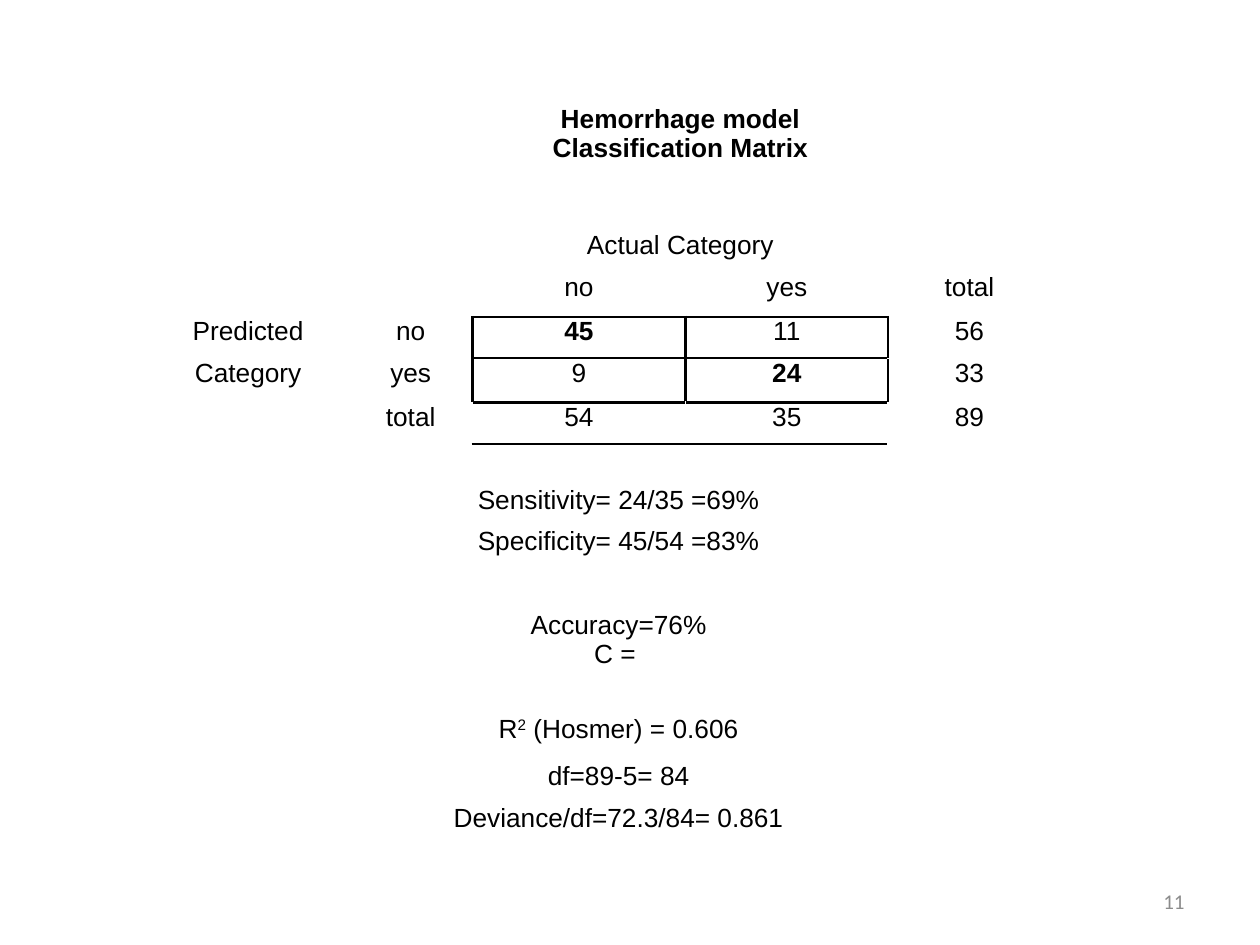
from dataclasses import dataclass

from lxml import etree
from pptx import Presentation
from pptx.dml.color import RGBColor
from pptx.enum.text import MSO_ANCHOR, PP_ALIGN
from pptx.oxml.ns import qn
from pptx.util import Pt

CENTER, RIGHT = PP_ALIGN.CENTER, PP_ALIGN.RIGHT
TOP, MIDDLE = MSO_ANCHOR.TOP, MSO_ANCHOR.MIDDLE


@dataclass(frozen=True)
class Theme:
    ink: str = "000000"
    grey: str = "8C8C8C"
    font: str = "Arial"
    foot: str = "Calibri"
    body: float = 15
    small: float = 12
    line: float = 1.5


@dataclass(frozen=True)
class Entry:
    row: int
    col: int
    text: str = ""
    span: int = 1
    bold: bool = False


THEME = Theme()
LEFT, HEAD = 84.2, 60
COLS = [115.2, 70.6, 121.7, 115.9, 92.9]
ROW = 23.8
ROWS = [ROW] * 16
ROWS[0], ROWS[3], ROWS[5], ROWS[13] = 48.2, 25.2, 25.2, 26.6

# The boxed part of the matrix
BOX_ROWS, BOX_COLS = range(4, 6), range(2, 4)
SIDES = {"lnL": (0, -1), "lnR": (0, 1), "lnT": (-1, 0), "lnB": (1, 0)}

MATRIX = [
    ["", "", "no", "yes", "total"],
    ["Predicted", "no", "45", "11", "56"],
    ["Category", "yes", "9", "24", "33"],
    ["", "total", "54", "35", "89"],
]
HITS = {(4, 2), (5, 3)}
RESULTS = [
    "Sensitivity= 24/35 =69%",
    "Specificity= 45/54 =83%",
    "",
    "Accuracy=76%\nC = ",
    "",
    "R^2^ (Hosmer) = 0.606",
    "df=89-5= 84",
    "Deviance/df=72.3/84= 0.861",
]

ENTRIES = [
    Entry(0, 0, span=2),
    Entry(0, 2, "Hemorrhage model\nClassification Matrix", 2, True),
    Entry(1, 2, span=2),
    Entry(2, 2, "Actual Category", 2),
]
ENTRIES += [
    Entry(r, c, text, bold=(r, c) in HITS)
    for r, line in enumerate(MATRIX, 3)
    for c, text in enumerate(line)
]
ENTRIES += [Entry(r, 1, text, 3) for r, text in enumerate(RESULTS, 8)]


def write(frame, text: str, *, size: float = THEME.body, font: str = THEME.font,
          color: str = THEME.ink, bold: bool = False, align=CENTER) -> None:
    """Fill a frame, one paragraph a line; text between carets is raised."""
    for i, line in enumerate(text.split("\n")):
        para = frame.add_paragraph() if i else frame.paragraphs[0]
        para.alignment = align
        for j, part in enumerate(line.split("^")):
            if not part:
                continue
            run = para.add_run()
            run.text = part
            run.font.size, run.font.name = Pt(size), font
            run.font.bold = bold
            run.font.color.rgb = RGBColor.from_string(color)
            if j % 2:
                run._r.get_or_add_rPr().set("baseline", "30000")
        # Keeps empty cells from growing to the default text size
        etree.SubElement(para._p, qn("a:endParaRPr"), sz=str(int(size * 100)))


def boxed(row: int, col: int) -> bool:
    return row in BOX_ROWS and col in BOX_COLS


def edge(cell, row: int, col: int) -> None:
    """Rule each side where the cell and its neighbour differ on the box."""
    props = cell._tc.get_or_add_tcPr()
    for tag, (down, over) in SIDES.items():
        if boxed(row, col) == boxed(row + down, col + over):
            continue
        line = etree.SubElement(props, qn(f"a:{tag}"), w=str(Pt(THEME.line)))
        fill = etree.SubElement(line, qn("a:solidFill"))
        etree.SubElement(fill, qn("a:srgbClr"), val=THEME.ink)


def draw_table(slide, items: list[Entry]) -> None:
    table = slide.shapes.add_table(
        len(ROWS), len(COLS), Pt(LEFT), Pt(HEAD), Pt(sum(COLS)), Pt(sum(ROWS))
    ).table
    table.first_row = table.horz_banding = False
    for col, width in zip(table.columns, COLS):
        col.width = Pt(width)
    for row, height in zip(table.rows, ROWS):
        row.height = Pt(height)

    filled = {(item.row, item.col): item for item in items}
    for r in range(len(ROWS)):
        for c in range(len(COLS)):
            cell = table.cell(r, c)
            item = filled.get((r, c), Entry(r, c))
            cell.margin_left = cell.margin_right = Pt(1.3)
            cell.margin_top = cell.margin_bottom = Pt(0)
            cell.vertical_anchor = TOP
            edge(cell, r, c)
            cell.fill.background()
            write(cell.text_frame, item.text, bold=item.bold)
    for item in items:
        if item.span > 1:
            end = table.cell(item.row, item.col + item.span - 1)
            table.cell(item.row, item.col).merge(end)


def draw_page(slide, text: str) -> None:
    box = slide.shapes.add_textbox(Pt(516), Pt(500.5), Pt(168), Pt(28.8))
    frame = box.text_frame
    frame.word_wrap = True
    frame.vertical_anchor = MIDDLE
    write(frame, text, size=THEME.small, font=THEME.foot,
          color=THEME.grey, align=RIGHT)


def main() -> None:
    deck = Presentation()
    deck.slide_width, deck.slide_height = Pt(720), Pt(540)
    slide = deck.slides.add_slide(deck.slide_layouts[6])
    draw_page(slide, "11")
    draw_table(slide, ENTRIES)
    deck.save("out.pptx")


if __name__ == "__main__":
    main()
